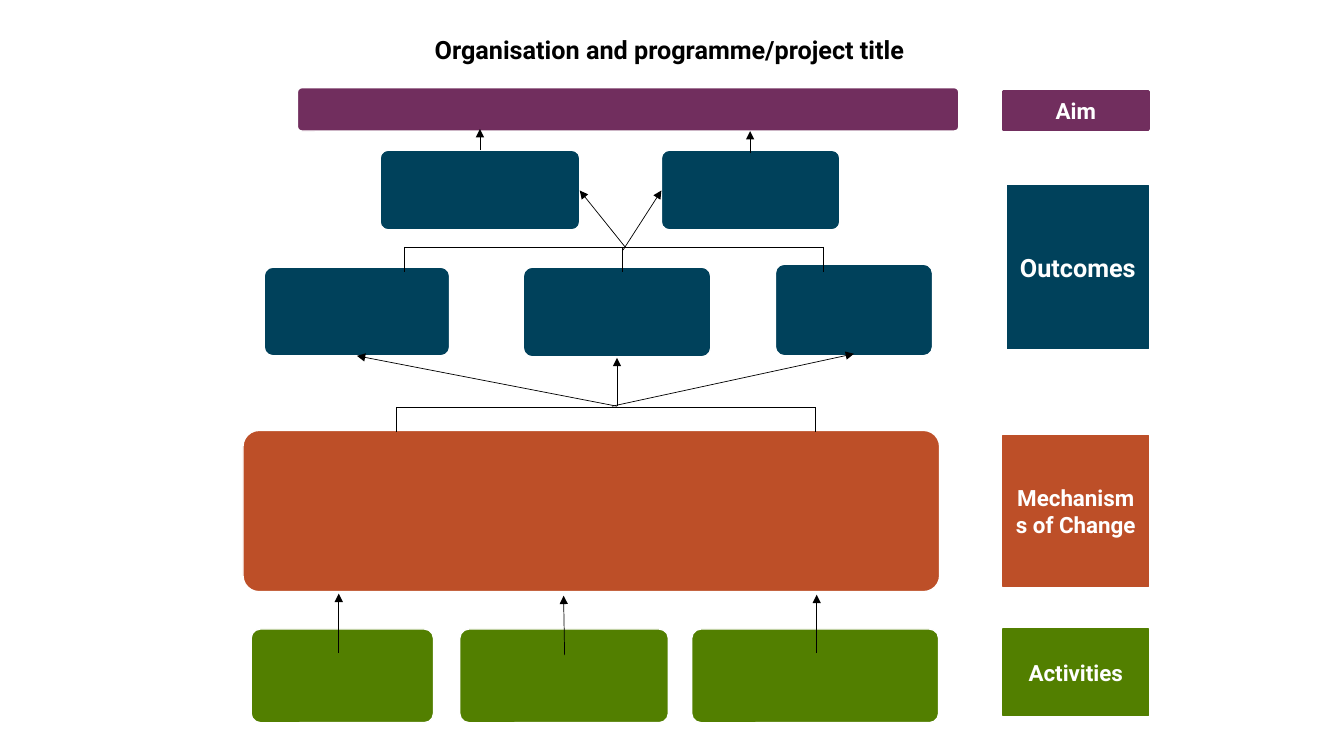
from lxml import etree
from pptx import Presentation
from pptx.dml.color import RGBColor
from pptx.enum import shapes, text
from pptx.oxml import ns
from pptx.util import Inches, Pt

PLUM = RGBColor(0x71, 0x2E, 0x5E)
NAVY = RGBColor(0x00, 0x41, 0x5B)
RUST = RGBColor(0xBD, 0x4F, 0x28)
GREEN = RGBColor(0x52, 0x7F, 0x00)
WHITE = RGBColor(0xFF, 0xFF, 0xFF)
BLACK = RGBColor(0, 0, 0)

LABELS = [
    ("Aim", (9.95, 0.91, 1.44, 0.37), PLUM, 16, 2.25),
    ("Outcomes", (9.99, 1.84, 1.4, 1.62), NAVY, 18, 0.75),
    ("Mechanisms of Change", (9.95, 4.32, 1.44, 1.5), RUST, 16, 1),
    ("Activities", (9.95, 6.24, 1.44, 0.86), GREEN, 16, 1),
]
BOXES = [
    (GREEN, [(2.49, 6.24, 1.81, 0.93), (4.56, 6.24, 2.07, 0.93),
             (6.86, 6.24, 2.45, 0.93)]),
    (RUST, [(2.41, 4.27, 6.91, 1.6)]),
    (NAVY, [(2.62, 2.65, 1.84, 0.88), (5.19, 2.65, 1.86, 0.89),
            (7.69, 2.62, 1.56, 0.91), (3.77, 1.49, 1.98, 0.79),
            (6.56, 1.49, 1.77, 0.79)]),
    (PLUM, [(2.95, 0.87, 6.56, 0.43)]),
]
ARROWS = [
    (3.36, 6.48, 3.36, 5.89), (5.6, 6.5, 5.59, 5.91), (8.1, 6.48, 8.1, 5.9),
    (6.12, 4.03, 3.54, 3.53), (6.12, 4.03, 6.12, 3.55),
    (6.07, 4.03, 8.47, 3.51), (6.2, 2.45, 5.75, 1.89),
    (6.18, 2.48, 6.56, 1.89), (4.76, 1.49, 4.76, 1.28),
    (7.44, 1.52, 7.44, 1.3),
]
FORKS = [(4.04, (3.93, 8.09)), (2.45, (4.01, 6.17, 8.17))]
DROP = 0.25


def write(frame, words, size=16, color=WHITE, anchor=text.MSO_ANCHOR.MIDDLE):
    """Put one centred bold line of text in a frame."""
    frame.word_wrap = True
    frame.vertical_anchor = anchor
    para = frame.paragraphs[0]
    para.alignment = text.PP_ALIGN.CENTER
    run = para.add_run()
    run.text = words
    run.font.name = "Roboto"
    run.font.size = Pt(size)
    run.font.bold = True
    run.font.color.rgb = color


def box(slide, kind, place, fill, edge, width=1):
    """Add a flat filled shape."""
    shape = slide.shapes.add_shape(kind, *map(Inches, place))
    shape.shadow.inherit = False
    shape.fill.solid()
    shape.fill.fore_color.rgb = fill
    shape.line.color.rgb = edge
    shape.line.width = Pt(width)
    return shape


def label(slide, words, place, fill, size, width):
    """Add a square-cornered label for one level."""
    shape = box(slide, shapes.MSO_SHAPE.RECTANGLE, place, fill, fill, width)
    write(shape.text_frame, words, size=size)


def card(slide, place, fill):
    """Add an empty rounded box with a white edge."""
    shape = box(slide, shapes.MSO_SHAPE.ROUNDED_RECTANGLE, place, fill, WHITE)
    shape.adjustments[0] = 0.1


def line(slide, ends, head=False):
    """Add a thin black line, with an arrowhead if asked."""
    link = slide.shapes.add_connector(
        shapes.MSO_CONNECTOR.STRAIGHT, *map(Inches, ends))
    link.line.color.rgb = BLACK
    link.line.width = Pt(0.5)
    props = link._element.spPr
    if head:
        etree.SubElement(props.find(ns.qn("a:ln")), ns.qn("a:tailEnd"),
                         type="triangle")
    etree.SubElement(props, ns.qn("a:effectLst"))


def fork(slide, top, stems):
    """Add a bar with a short stem down at each given place."""
    line(slide, (stems[0], top, stems[-1], top))
    for left in stems:
        line(slide, (left, top, left, top + DROP))


def main():
    """Build the theory of change slide."""
    deck = Presentation()
    deck.slide_width, deck.slide_height = Inches(13.33), Inches(7.5)
    slide = deck.slides.add_slide(deck.slide_layouts[6])
    title = slide.shapes.add_textbox(*map(Inches, (1.89, 0.29, 9.5, 0.4)))
    write(title.text_frame, "Organisation and programme/project title",
          size=18, color=BLACK, anchor=text.MSO_ANCHOR.TOP)
    for item in LABELS:
        label(slide, *item)
    for fill, places in BOXES:
        for place in places:
            card(slide, place, fill)
    for top, stems in FORKS:
        fork(slide, top, stems)
    for ends in ARROWS:
        line(slide, ends, head=True)
    deck.save("out.pptx")


if __name__ == "__main__":
    main()
